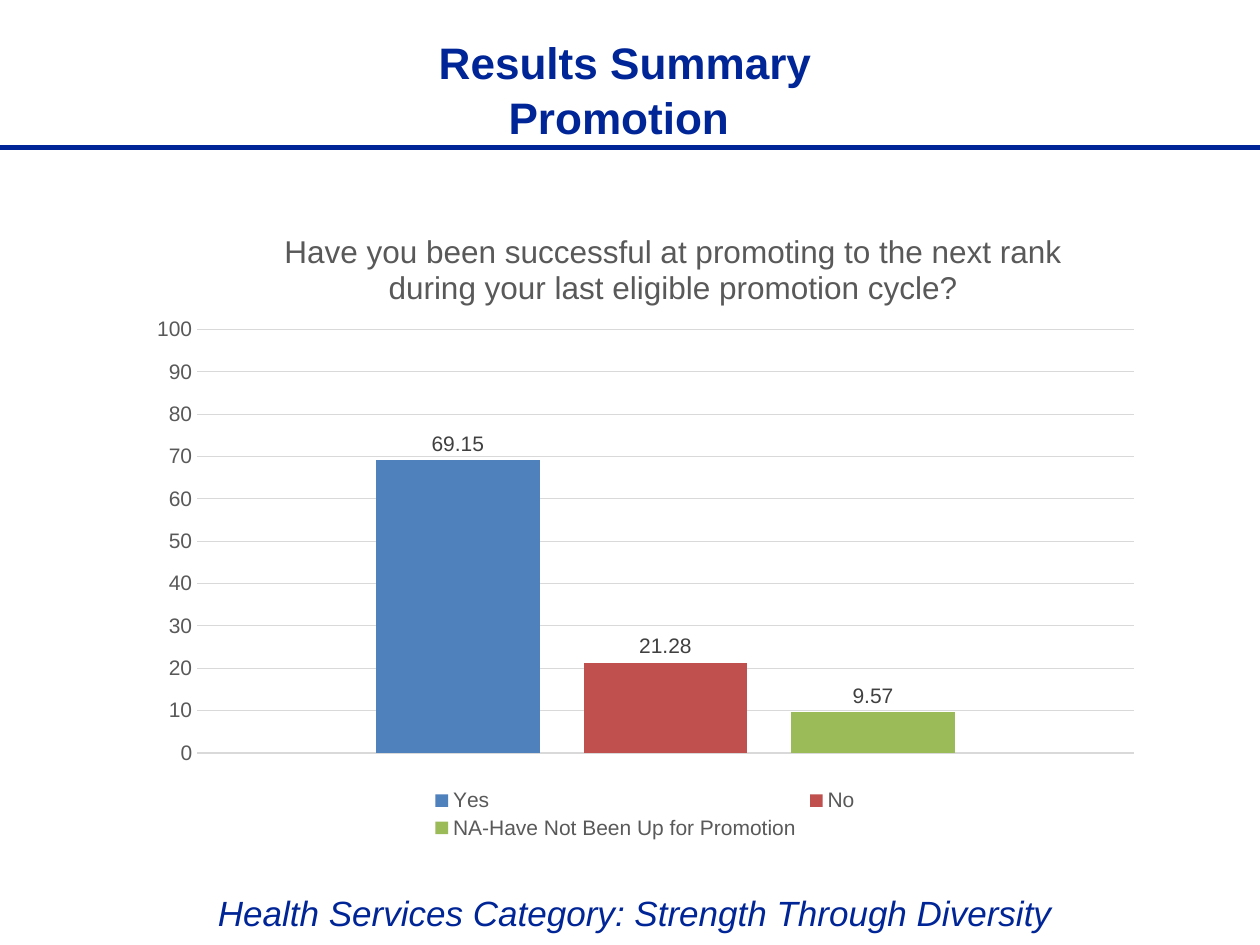
from lxml import etree
from pptx import Presentation
from pptx.chart.data import CategoryChartData
from pptx.dml.color import RGBColor
from pptx.enum import chart as ch, shapes, text
from pptx.oxml import ns
from pptx.util import Inches, Pt

NAVY = RGBColor(0x00, 0x25, 0x96)
GRAY = RGBColor(0x59, 0x59, 0x59)
DARK = RGBColor(0x40, 0x40, 0x40)
GRID = RGBColor(0xD9, 0xD9, 0xD9)
BLUE = RGBColor(0x4F, 0x81, 0xBD)
RED = RGBColor(0xC0, 0x50, 0x4D)
GREEN = RGBColor(0x9B, 0xBB, 0x59)


def style(font, size, color, bold=False, italic=False):
    font.name = "Arial"
    font.size = Pt(size)
    font.color.rgb = color
    font.bold = bold
    font.italic = italic


def add_text(words, left, top, width, height, spacing=1.0, **look):
    box = slide.shapes.add_textbox(Inches(left), Inches(top), Inches(width), Inches(height))
    frame = box.text_frame
    frame.word_wrap = True
    frame.vertical_anchor = text.MSO_ANCHOR.MIDDLE
    line = frame.paragraphs[0]
    line.text = words
    line.alignment = text.PP_ALIGN.CENTER
    line.line_spacing = spacing
    for run in line.runs:
        style(run.font, **look)


prs = Presentation()
prs.slide_width, prs.slide_height = Inches(10), Inches(7.5)
slide = prs.slides.add_slide(prs.slide_layouts[6])

rule = slide.shapes.add_connector(
    shapes.MSO_CONNECTOR.STRAIGHT, Inches(0), Inches(1.17), Inches(10), Inches(1.17))
rule.line.color.rgb = NAVY
rule.line.width = Pt(3)
etree.SubElement(rule._element.spPr, ns.qn("a:effectLst"))

add_text("Health Services Category: Strength Through Diversity",
         0.84, 7.02, 8.4, 0.44, size=20, color=NAVY, italic=True)
add_text("Results Summary\vPromotion ",
         1.1, 0.23, 7.72, 0.94, spacing=1.05, size=25.2, color=NAVY, bold=True)

answers = [("Yes", 69.15, BLUE), ("No", 21.28, RED),
           ("NA-Have Not Been Up for Promotion", 9.57, GREEN)]
data = CategoryChartData()
data.categories = ["1"]
for name, share, _ in answers:
    data.add_series(name, [share])
chart = slide.shapes.add_chart(
    ch.XL_CHART_TYPE.COLUMN_CLUSTERED, Inches(1.08), Inches(1.53),
    Inches(8.08), Inches(5.17), data).chart
chart.font.name = "Arial"
chart.font.size = Pt(10)

chart.has_title = True
question = chart.chart_title.text_frame.paragraphs[0]
question.text = ("Have you been successful at promoting to the next rank "
                 "during your last eligible promotion cycle?")
style(question.runs[0].font, 18, GRAY)
chart.chart_title.include_in_layout = False

chart.has_legend = True
chart.legend.position = ch.XL_LEGEND_POSITION.BOTTOM
chart.legend.include_in_layout = False
style(chart.legend.font, 12, GRAY)

chart.category_axis.visible = False
scale = chart.value_axis
scale.minimum_scale, scale.maximum_scale, scale.major_unit = 0, 100, 10
scale.major_tick_mark = ch.XL_TICK_MARK.NONE
scale.format.line.fill.background()
scale.major_gridlines.format.line.color.rgb = GRID
scale.major_gridlines.format.line.width = Pt(0.75)
style(scale.tick_labels.font, 12, GRAY)

plot = chart.plots[0]
plot.gap_width = 219
plot.overlap = -27
plot.vary_by_categories = False
for series, (_, _, color) in zip(plot.series, answers):
    series.format.fill.solid()
    series.format.fill.fore_color.rgb = color
    labels = series.data_labels
    labels.show_value = True
    labels.position = ch.XL_LABEL_POSITION.OUTSIDE_END
    style(labels.font, 12, DARK)

title_part = chart.chart_title._element
plot_part = chart._chartSpace.chart.plotArea
placements = [
    (title_part, 1, {"xMode": "edge", "yMode": "edge", "x": 0.14, "y": 0.05}),
    (plot_part, 0, {"layoutTarget": "inner", "xMode": "edge", "yMode": "edge",
                    "x": 0.06, "y": 0.21, "w": 0.92, "h": 0.65}),
]
for part, index, settings in placements:
    for old in part.findall(ns.qn("c:layout")):
        part.remove(old)
    layout = etree.Element(ns.qn("c:layout"))
    part.insert(index, layout)
    manual = etree.SubElement(layout, ns.qn("c:manualLayout"))
    for key, value in settings.items():
        etree.SubElement(manual, ns.qn(f"c:{key}")).set("val", str(value))

prs.save("out.pptx")
